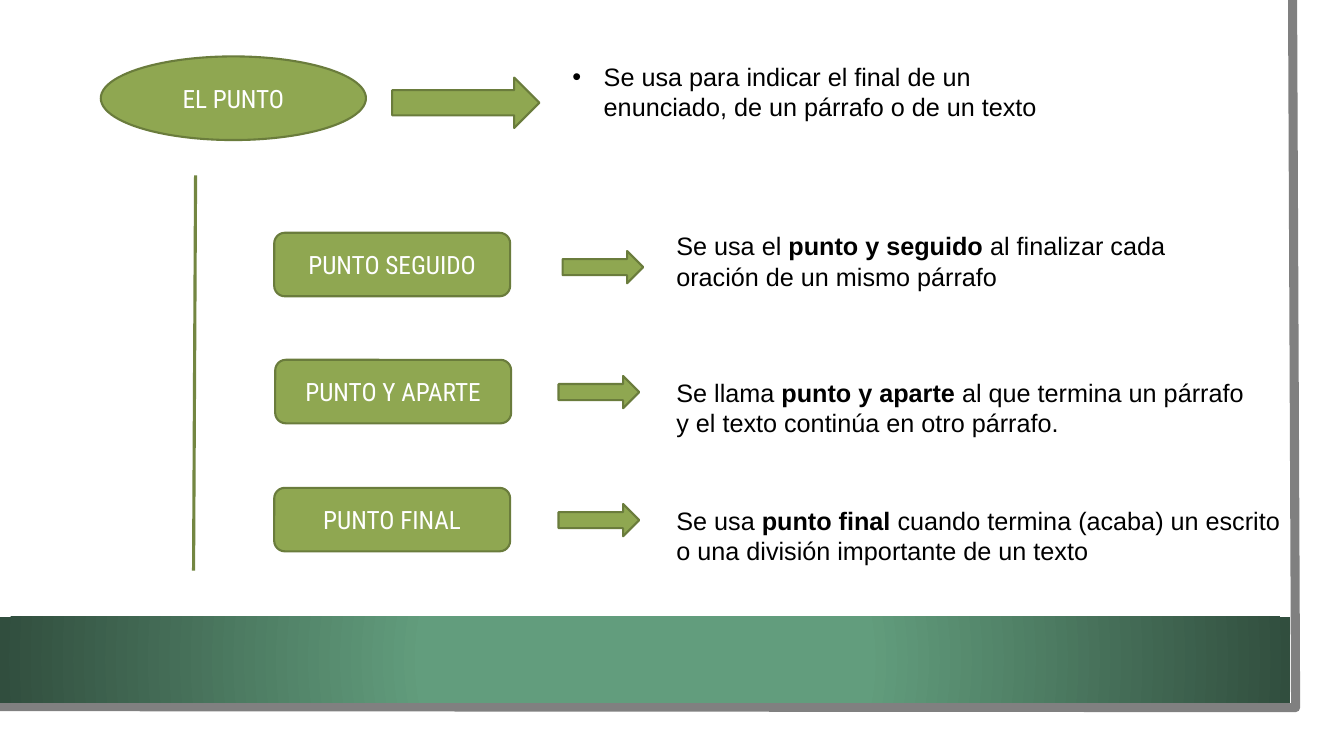
from lxml import etree
from pptx import Presentation
from pptx.dml.color import RGBColor
from pptx.enum.shapes import MSO_CONNECTOR, MSO_SHAPE
from pptx.enum.text import MSO_ANCHOR, PP_ALIGN
from pptx.oxml.ns import qn
from pptx.util import Inches, Pt

RECTANGLE = MSO_SHAPE.RECTANGLE
OVAL = MSO_SHAPE.OVAL
ROUNDED = MSO_SHAPE.ROUNDED_RECTANGLE
ARROW = MSO_SHAPE.RIGHT_ARROW
STRAIGHT = MSO_CONNECTOR.STRAIGHT
CENTER = PP_ALIGN.CENTER
MIDDLE = MSO_ANCHOR.MIDDLE

GREEN, OUTLINE = "8FA751", "6A7C3C"


def color(value):
    return RGBColor.from_string(value)


def add_box(kind, left, top, width, height, fill=GREEN, outline=OUTLINE, label=""):
    shape = slide.shapes.add_shape(
        kind, Inches(left), Inches(top), Inches(width), Inches(height))
    shape.shadow.inherit = False
    shape.fill.solid()
    shape.fill.fore_color.rgb = color(fill)
    if outline:
        shape.line.color.rgb = color(outline)
        shape.line.width = Pt(1.5)
    else:
        shape.line.fill.background()
    if label:
        shape.text_frame.vertical_anchor = MIDDLE
        paragraph = shape.text_frame.paragraphs[0]
        paragraph.text = label
        paragraph.alignment = CENTER
        paragraph.font.name = "Roboto Condensed"
        paragraph.font.size = Pt(18)
        paragraph.font.color.rgb = color("FFFFFF")
    return shape


presentation = Presentation()
presentation.slide_width = Inches(13.33)
presentation.slide_height = Inches(7.5)
slide = presentation.slides.add_slide(presentation.slide_layouts[6])

# White page with a grey edge on the right and bottom
add_box(RECTANGLE, 0, 0, 13.1, 7.27, "FFFFFF", None)
builder = slide.shapes.build_freeform(Inches(12.82), 0)
builder.add_line_segments(
    [(Inches(12.85), Inches(7.02)), (Inches(-0.03), Inches(7.01))], close=False)
edge = builder.convert_to_shape()
edge.shadow.inherit = False
edge.fill.background()
edge.line.color.rgb = color("808080")
edge.line.width = Pt(6.5)

# Green band with a radial gradient
band = add_box(RECTANGLE, 0, 6.12, 12.8, 0.85, "629D7D", None)
gradient = etree.Element(qn("a:gradFill"), rotWithShape="1")
stops = etree.SubElement(gradient, qn("a:gsLst"))
for position, value in ((34, "629D7D"), (100, "314E3E")):
    stop = etree.SubElement(stops, qn("a:gs"), pos=str(position * 1000))
    etree.SubElement(stop, qn("a:srgbClr"), val=value)
radial = etree.SubElement(gradient, qn("a:path"), path="circle")
etree.SubElement(radial, qn("a:fillToRect"), l="50000", t="50000", r="50000", b="50000")
band_properties = band.element.spPr
band_properties.replace(band_properties.find(qn("a:solidFill")), gradient)

# Main concept, its arrow and the vertical line
add_box(OVAL, 1, 0.56, 2.63, 0.83, label="EL PUNTO")
add_box(ARROW, 3.89, 0.77, 1.46, 0.5)
line = slide.shapes.add_connector(
    STRAIGHT, Inches(1.94), Inches(1.74), Inches(1.92), Inches(5.66))
line.line.color.rgb = color("738641")
line.line.width = Pt(2.25)
etree.SubElement(line.element.spPr, qn("a:effectLst"))

# Kinds of full stop: label, label left and top, arrow left and top
kinds = [
    ("PUNTO SEGUIDO", 2.72, 2.31, 5.58, 2.49),
    ("PUNTO Y APARTE", 2.73, 3.57, 5.54, 3.73),
    ("PUNTO FINAL", 2.72, 4.84, 5.54, 5),
]
for label, left, top, arrow_left, arrow_top in kinds:
    add_box(ROUNDED, left, top, 2.34, 0.63, label=label)
    add_box(ARROW, arrow_left, arrow_top, 0.8, 0.32)

# Explanations: left, top, width, bulleted, paragraphs of (text, bold) runs
explanations = [
    (5.58, 0.56, 5.37, True, [
        [("Se usa para indicar el final de un enunciado, "
          "de un párrafo o de un texto", False)]]),
    (6.61, 2.24, 5.56, False, [
        [("Se usa el ", False), ("punto y seguido ", True),
         ("al finalizar cada oración de un mismo párrafo", False)]]),
    (6.61, 3.69, 5.92, False, [
        [("Se llama ", False), ("punto y aparte ", True),
         ("al que termina un párrafo y el texto continúa en otro párrafo.", False)]]),
    (6.61, 4.96, 6.59, False, [
        [("Se usa ", False), ("punto final ", True),
         ("cuando termina (acaba) un escrito", False)],
        [("o una división importante de un texto", False)]]),
]
for left, top, width, bulleted, paragraphs in explanations:
    text_box = slide.shapes.add_textbox(
        Inches(left), Inches(top), Inches(width), Inches(0.71))
    frame = text_box.text_frame
    frame.word_wrap = True
    for index, runs in enumerate(paragraphs):
        paragraph = frame.add_paragraph() if index else frame.paragraphs[0]
        if bulleted:
            properties = paragraph._p.get_or_add_pPr()
            properties.set("marL", str(Inches(0.31)))
            properties.set("indent", str(Inches(-0.31)))
            etree.SubElement(properties, qn("a:buFont"), typeface="Arial")
            etree.SubElement(properties, qn("a:buChar"), char="•")
        paragraph.font.name = "Arial"
        paragraph.font.size = Pt(18)
        paragraph.font.color.rgb = color("000000")
        for text, bold in runs:
            run = paragraph.add_run()
            run.text = text
            if bold:
                run.font.bold = True

presentation.save("out.pptx")
